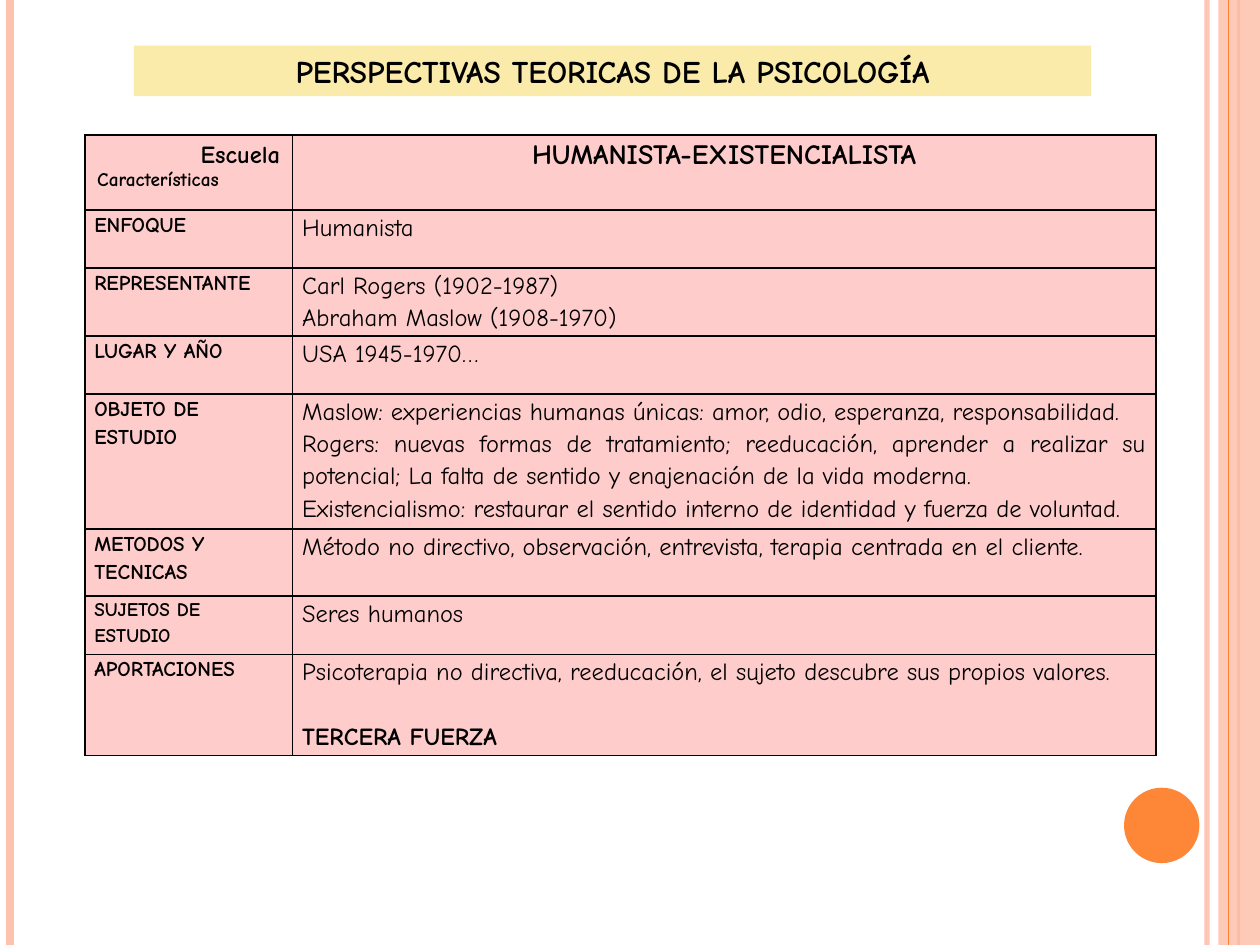
from lxml.etree import SubElement
from pptx import Presentation
from pptx.dml.color import RGBColor
from pptx.enum.shapes import MSO_CONNECTOR, MSO_SHAPE
from pptx.enum.text import MSO_ANCHOR, PP_ALIGN
from pptx.oxml.ns import qn
from pptx.util import Cm, Pt

FONT = "Comic Neue"
BLACK = RGBColor(0, 0, 0)
PEACH = RGBColor(0xFE, 0xC3, 0xAE)
ORANGE = RGBColor(0xFE, 0x86, 0x37)
CREAM = RGBColor(0xFB, 0xEB, 0xAB)
PINK = RGBColor(0xFF, 0xCC, 0xCC)

TITLE = "PERSPECTIVAS TEORICAS DE LA PSICOLOGÍA"
SCHOOL = "HUMANISTA-EXISTENCIALISTA"
ROWS = [
    ("ENFOQUE", 12, 1.17, ["Humanista"]),
    ("REPRESENTANTE", 12, 1.37,
     ["Carl Rogers (1902-1987)", "Abraham Maslow (1908-1970)"]),
    ("LUGAR Y AÑO", 12, 1.17, ["USA 1945-1970…"]),
    ("OBJETO DE ESTUDIO", 12, 2.72, [
        "Maslow: experiencias humanas únicas: amor, odio, esperanza, responsabilidad.",
        "Rogers: nuevas formas de tratamiento; reeducación, aprender a realizar su "
        "potencial; La falta de sentido y enajenación de la vida moderna.",
        "Existencialismo: restaurar el sentido interno de identidad y fuerza de voluntad.",
    ]),
    ("METODOS Y TECNICAS", 12, 1.35,
     ["Método no directivo, observación, entrevista, terapia centrada en el cliente."]),
    ("SUJETOS DE ESTUDIO", 11, 1.18, ["Seres humanos"]),
    ("APORTACIONES", 12, 2.04,
     ["Psicoterapia no directiva, reeducación, el sujeto descubre sus propios valores."]),
]


def fade(node, alpha):
    """Make the colour inside an XML node partly transparent."""
    color = next(node.iter(qn("a:srgbClr")))
    SubElement(color, qn("a:alpha"), val=str(alpha * 1000))


def add_line(slide, x, top, high, color, width, alpha=100):
    """Draw one vertical line."""
    line = slide.shapes.add_connector(
        MSO_CONNECTOR.STRAIGHT, Cm(x), Cm(top), Cm(x), Cm(top + high))
    line.line.color.rgb = color
    line.line.width = Pt(width)
    props = line.element.spPr
    SubElement(props, qn("a:effectLst"))
    if alpha < 100:
        fade(props, alpha)


def add_solid(slide, kind, left, top, wide, high, color):
    """Draw one plain filled shape."""
    shape = slide.shapes.add_shape(kind, Cm(left), Cm(top), Cm(wide), Cm(high))
    shape.shadow.inherit = False
    shape.fill.solid()
    shape.fill.fore_color.rgb = color
    shape.line.fill.background()
    return shape


def add_text(para, text, size, bold=False, align=PP_ALIGN.LEFT, space=None):
    """Fill a paragraph with one styled run."""
    para.alignment = align
    if space:
        para.line_spacing = space
    run = para.add_run()
    run.text = text
    run.font.name = FONT
    run.font.size = Pt(size)
    run.font.bold = bold
    run.font.color.rgb = BLACK


def add_frame(slide, left, top, wide, high):
    """Draw the side bars and the dot inside the given box."""
    right = left + wide
    add_line(slide, right - 1.07, top, high, PEACH, 3, 93)
    add_line(slide, left + 0.2, top, high, PEACH, 4.5)
    add_line(slide, right - 0.43, top, high, ORANGE, 1.5)
    band = add_solid(slide, MSO_SHAPE.RECTANGLE, right - 0.84, top, 0.84, high, PEACH)
    fade(band.element.spPr, 87)
    add_line(slide, right - 0.64, top, high, ORANGE, 0.75)
    add_solid(slide, MSO_SHAPE.OVAL, right - 2.74, top + 15.88, 1.52, 1.52, ORANGE)


def add_title(slide, left, top, wide, high):
    """Place the title bar."""
    bar = add_solid(slide, MSO_SHAPE.RECTANGLE, left, top, wide, high, CREAM)
    frame = bar.text_frame
    frame.word_wrap = True
    frame.vertical_anchor = MSO_ANCHOR.MIDDLE
    add_text(frame.paragraphs[0], TITLE, 18, True, PP_ALIGN.CENTER)


def style_cell(cell):
    """Give a cell its fill, margins and black borders."""
    cell.fill.solid()
    cell.fill.fore_color.rgb = PINK
    cell.margin_left = cell.margin_right = Cm(0.19)
    cell.margin_top = cell.margin_bottom = 0
    props = cell._tc.get_or_add_tcPr()
    for spot, side in enumerate(("lnL", "lnR", "lnT", "lnB")):
        edge = SubElement(props, qn("a:" + side), w=str(Pt(1)))
        fill = SubElement(edge, qn("a:solidFill"))
        SubElement(fill, qn("a:srgbClr"), val=str(BLACK))
        props.insert(spot, edge)


def add_head(table):
    """Write the header row."""
    corner, school = table.cell(0, 0), table.cell(0, 1)
    corner.margin_left = corner.margin_right = Cm(0.25)
    corner.margin_top = corner.margin_bottom = Cm(0.13)
    frame = corner.text_frame
    add_text(frame.paragraphs[0], "Escuela", 14, True, PP_ALIGN.RIGHT)
    add_text(frame.add_paragraph(), "Características", 11, True)
    add_text(school.text_frame.paragraphs[0], SCHOOL, 16, True, PP_ALIGN.CENTER, 1.15)


def add_grid(slide, left, top, wide):
    """Place the table of traits."""
    highs = [1.51] + [row[2] for row in ROWS]
    table = slide.shapes.add_table(
        len(highs), 2, Cm(left), Cm(top), Cm(wide), Cm(sum(highs))).table
    table.first_row = table.horz_banding = False
    table.columns[0].width = Cm(4.19)
    table.columns[1].width = Cm(wide - 4.19)
    for row, high in zip(table.rows, highs):
        row.height = Cm(high)
    for cell in table.iter_cells():
        style_cell(cell)
    add_head(table)
    for spot, (label, size, _, lines) in enumerate(ROWS, 1):
        name = table.cell(spot, 0).text_frame.paragraphs[0]
        add_text(name, label, size, True, space=1.15)
        frame = table.cell(spot, 1).text_frame
        for rank, text in enumerate(lines):
            para = frame.add_paragraph() if rank else frame.paragraphs[0]
            add_text(para, text, 14, False, PP_ALIGN.JUSTIFY, 1.15)
    last = frame.add_paragraph()
    last.space_before = Pt(18.4)
    add_text(last, "TERCERA FUERZA", 14, True, PP_ALIGN.JUSTIFY, 1.15)


def main():
    """Build the slide and save it."""
    deck = Presentation()
    deck.slide_width, deck.slide_height = Cm(25.4), Cm(19.05)
    slide = deck.slides.add_slide(deck.slide_layouts[6])
    add_frame(slide, 0, 0, 25.4, 19.05)
    add_title(slide, 2.7, 0.92, 19.3, 1.02)
    add_grid(slide, 1.71, 2.72, 21.59)
    deck.save("out.pptx")


if __name__ == "__main__":
    main()
